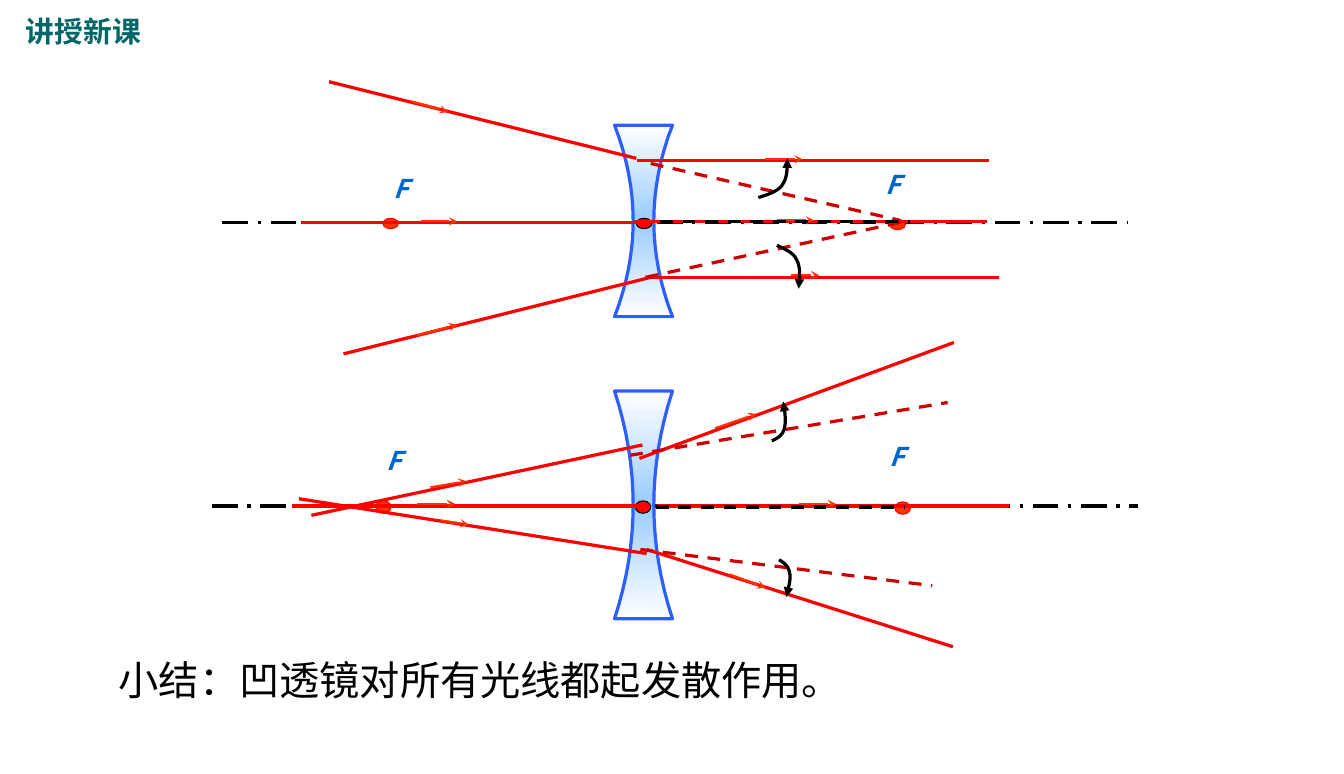
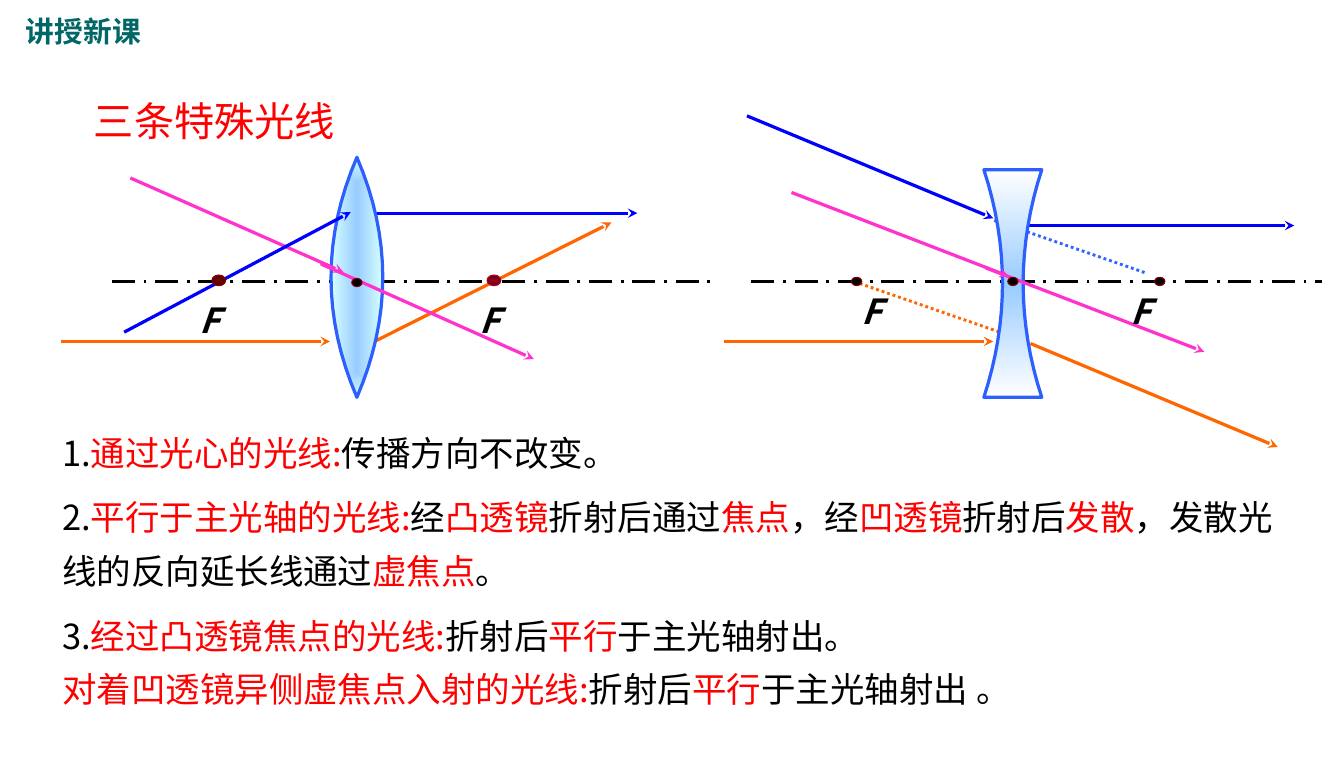
"""Build two slides on how lenses bend light rays."""
from lxml.etree import SubElement
from pptx import Presentation
from pptx.dml.color import RGBColor
from pptx.enum.dml import MSO_LINE
from pptx.enum.shapes import MSO_CONNECTOR, MSO_SHAPE
from pptx.enum.text import MSO_ANCHOR as ANCHOR, MSO_AUTO_SIZE as AUTO, PP_ALIGN as ALIGN
from pptx.oxml.ns import qn
from pptx.util import Pt

PX = 9144
CJK = "Noto Sans CJK SC"
COLORS = {
    "black": "000000", "red": "FF0000", "scarlet": "FF3300", "crimson": "CC0000",
    "label": "0066CC", "title": "006666", "orange": "FF6600", "blue": "0000FF",
    "sky": "3366FF", "pink": "FF33CC", "rim": "2D5FFF", "white": "FFFFFF",
    "glass": "99CCFF", "ice": "D5FFFF", "wine": "A50021", "dark wine": "4C000F",
    "maroon": "800000", "dark maroon": "3B0000",
}
RGB = {name: RGBColor.from_string(code) for name, code in COLORS.items()}
STYLES = {
    "axis": ("black", 2.25, MSO_LINE.LONG_DASH_DOT, None),
    "thin axis": ("black", 2, MSO_LINE.LONG_DASH_DOT, None),
    "ray": ("red", 2.25, None, None),
    "direction": ("scarlet", 1.5, None, "stealth"),
    "extension": ("crimson", 2.25, MSO_LINE.DASH, None),
    "axis extension": ("black", 2.25, MSO_LINE.DASH, None),
    "parallel ray": ("orange", 2.25, None, "stealth"),
    "focal ray": ("blue", 2.25, None, "stealth"),
    "centre ray": ("pink", 2.25, None, "stealth"),
    "parallel trace": ("orange", 2, MSO_LINE.ROUND_DOT, None),
    "focal trace": ("sky", 2, MSO_LINE.ROUND_DOT, None),
}


def add_line(page, style, x1, y1, x2, y2):
    color, width, dash, arrow = STYLES[style]
    stroke = page.shapes.add_connector(
        MSO_CONNECTOR.STRAIGHT, x1 * PX, y1 * PX, x2 * PX, y2 * PX)
    stroke.line.color.rgb = RGB[color]
    stroke.line.width = Pt(width)
    if dash:
        stroke.line.dash_style = dash
    if arrow:
        SubElement(stroke.line._get_or_add_ln(), qn("a:tailEnd"), type=arrow)
    SubElement(stroke._element.spPr, qn("a:effectLst"))


def fill_gradient(shape, colors, linear):
    shape.fill.gradient()
    gradient = shape._element.spPr.find(qn("a:gradFill"))
    gradient.clear()
    stops = SubElement(gradient, qn("a:gsLst"))
    for index, color in enumerate(colors):
        stop = SubElement(stops, qn("a:gs"), pos=str(100000 * index // (len(colors) - 1)))
        SubElement(stop, qn("a:srgbClr"), val=COLORS[color])
    if linear:
        SubElement(gradient, qn("a:lin"), ang="5400000", scaled="0")
    else:
        burst = SubElement(gradient, qn("a:path"), {"path": "shape"})
        SubElement(burst, qn("a:fillToRect"), {side: "50000" for side in "ltrb"})


deck = Presentation()
deck.slide_width, deck.slide_height = 1299 * PX, 748 * PX
diverging = deck.slides.add_slide(deck.slide_layouts[5])
special = deck.slides.add_slide(deck.slide_layouts[1])

for page, style, lines in (
    (diverging, "axis", [(215, 215, 1090, 215), (205, 489, 1100, 489)]),
    (special, "thin axis", [(108, 272, 692, 272), (726, 272, 1278, 272)]),
    (special, "parallel ray", [(59, 330, 319, 330), (700, 330, 960, 330),
                               (360, 331, 591, 215), (996, 332, 1235, 432)]),
    (special, "parallel trace", [(831, 274, 978, 325)]),
    (special, "focal ray", [(357, 206, 616, 206), (722, 112, 960, 211),
                            (991, 218, 1251, 218)]),
    (special, "focal trace", [(961, 213, 1108, 264)]),
):
    for ends in lines:
        add_line(page, style, *ends)

concave = (28, -18, ("white", "glass", "white"), True)
convex = (0, 25, ("glass", "ice"), False)
for page, center, top, height, (edge, bulge, colors, linear) in (
    (diverging, 622, 121, 185, concave),
    (diverging, 622, 378, 220, concave),
    (special, 979, 164, 220, concave),
    (special, 345, 152, 232, convex),
):
    right, left = [], []
    for step in range(17):
        reach = edge + bulge * (1 - (step / 8 - 1) ** 2)
        y = (top + height * step / 16) * PX
        right.append(((center + reach) * PX, y))
        left.insert(0, ((center - reach) * PX, y))
    outline = page.shapes.build_freeform(*right[0])
    outline.add_line_segments(right[1:] + left, close=True)
    lens = outline.convert_to_shape()
    lens.shadow.inherit = False
    fill_gradient(lens, colors, linear)
    lens.line.color.rgb = RGB["rim"]
    lens.line.width = Pt(2.25)

for style, lines in (
    ("centre ray", [(765, 186, 975, 267), (953, 259, 1164, 340),
                    (126, 172, 332, 263), (310, 255, 516, 347)]),
    ("focal ray", [(120, 321, 339, 205)]),
):
    for ends in lines:
        add_line(special, style, *ends)

for page, size, colors, rim, width, corners in (
    (diverging, (15, 10), ["red"], "black", 0.75, [(615, 211)]),
    (diverging, (15, 10), ["scarlet"], "red", 0.75, [(370, 211), (860, 212)]),
    (diverging, (15, 12), ["red"], "black", 0.75, [(614, 484)]),
    (diverging, (15, 12), ["scarlet"], "red", 0.75, [(363, 484), (865, 485)]),
    (special, (13, 10), ["wine", "dark wine"], "wine", 1, [(471, 266)]),
    (special, (13, 10), ["maroon", "dark maroon"], "maroon", 1, [(205, 266)]),
    (special, (10, 8), ["black"], "maroon", 0,
     [(1116, 268), (823, 268), (974, 268), (340, 269)]),
):
    for x, y in corners:
        dot = page.shapes.add_shape(
            MSO_SHAPE.OVAL, x * PX, y * PX, size[0] * PX, size[1] * PX)
        dot.shadow.inherit = False
        if len(colors) > 1:
            fill_gradient(dot, colors, False)
        else:
            dot.fill.solid()
            dot.fill.fore_color.rgb = RGB[colors[0]]
        dot.line.color.rgb = RGB[rim]
        dot.line.width = Pt(width)

for style, lines in (
    ("ray", [(291, 215, 616, 215), (332, 342, 629, 268), (318, 79, 615, 153),
             (616, 155, 956, 155), (626, 268, 966, 268), (614, 214, 954, 214),
             (618, 443, 922, 331), (625, 531, 921, 625), (635, 489, 975, 489),
             (282, 489, 622, 489), (301, 498, 621, 430), (289, 482, 625, 535)]),
    ("direction", [(407, 214, 442, 214), (403, 324, 442, 314), (398, 98, 433, 108),
                   (739, 154, 776, 154), (765, 266, 792, 266), (751, 213, 787, 213),
                   (691, 414, 731, 400), (705, 555, 740, 568), (772, 487, 808, 487),
                   (403, 487, 440, 487), (416, 471, 451, 465), (426, 503, 453, 507)]),
    ("extension", [(624, 268, 875, 214), (629, 158, 870, 213),
                   (609, 440, 916, 389), (619, 531, 901, 566)]),
    ("axis extension", [(638, 214, 880, 214), (634, 490, 875, 490)]),
):
    for ends in lines:
        add_line(diverging, style, *ends)

for knots in (
    [(733, 191), (742, 188), (752, 185), (756, 179), (761, 172), (761, 163), (761, 153)],
    [(751, 237), (759, 241), (767, 244), (770, 251), (774, 258), (773, 268), (772, 279)],
    [(746, 426), (751, 424), (756, 421), (758, 415), (760, 408), (759, 398), (757, 388)],
    [(753, 541), (758, 544), (762, 547), (763, 553), (765, 559), (762, 568), (760, 577)],
):
    points = []
    for curve in (knots[:4], knots[3:]):
        for step in range(1, 9):
            t = step / 8
            weights = ((1 - t) ** 3, 3 * t * (1 - t) ** 2, 3 * t * t * (1 - t), t ** 3)
            points.append(tuple(
                PX * sum(w * knot[axis] for w, knot in zip(weights, curve))
                for axis in (0, 1)))
    outline = diverging.shapes.build_freeform(knots[0][0] * PX, knots[0][1] * PX)
    outline.add_line_segments(points, close=False)
    turn = outline.convert_to_shape()
    turn.shadow.inherit = False
    turn.fill.background()
    turn.line.color.rgb = RGB["black"]
    turn.line.width = Pt(2.25)
    SubElement(turn.line._get_or_add_ln(), qn("a:tailEnd"), type="triangle")

title_look = ("Arial", 20, True, False, 1.2, ALIGN.LEFT, ANCHOR.TOP, ["title"])
focus_look = (CJK, 18, True, True, 1.2, ALIGN.CENTER, ANCHOR.TOP, ["label"])
mark_look = (CJK, 24, True, True, 1.2, ALIGN.LEFT, ANCHOR.TOP, ["black"])
summary_look = (CJK, 28, False, False, 1.2, ALIGN.LEFT, ANCHOR.TOP, ["black"])
heading_look = (CJK, 28, False, False, 1.2, ALIGN.LEFT, ANCHOR.MIDDLE, ["red"])
rules_look = (CJK, 24, False, False, 1.56, ALIGN.LEFT, ANCHOR.TOP, ["black", "red"])
rules = [
    "1.|通过光心的光线:|传播方向不改变。",
    "2.|平行于主光轴的光线:|经|凸透镜|折射后通过|焦点|，经|凹透镜|折射后|发散"
    "|，发散光线的反向延长线通过|虚焦点|。",
    "3.|经过凸透镜焦点的光线:|折射后|平行|于主光轴射出。",
    "|对着凹透镜异侧虚焦点入射的光线:|折射后|平行|于主光轴射出 。",
]
texts = [(page, page.shapes.title, (15, 8, 184, 44), title_look, ["讲授新课"])
         for page in (diverging, special)]
texts += [(diverging, None, (x, y, 86, 40), focus_look, ["F"])
          for x, y in ((345, 162), (820, 158), (338, 425), (824, 421))]
texts += [(special, None, (x, y, 65, 50), mark_look, ["F"])
          for x, y in ((454, 284), (823, 275), (1083, 275), (183, 284))]
texts += [
    (diverging, None, (105, 628, 1095, 57), summary_look, ["小结：凹透镜对所有光线都起发散作用。"]),
    (special, None, (81, 77, 706, 78), heading_look, ["三条特殊光线"]),
    (special, special.placeholders[1], (50, 400, 1220, 291), rules_look, rules),
]
for page, holder, place, look, lines in texts:
    font, size, bold, italic, leading, align, anchor, colors = look
    left, top, width, height = (PX * length for length in place)
    box = holder or page.shapes.add_textbox(left, top, width, height)
    box.left, box.top, box.width, box.height = left, top, width, height
    frame = box.text_frame
    frame.word_wrap = True
    frame.auto_size = AUTO.NONE
    frame.vertical_anchor = anchor
    for index, line in enumerate(lines):
        para = frame.add_paragraph() if index else frame.paragraphs[0]
        para.alignment = align
        para.line_spacing = Pt(size * leading)
        para.space_before = Pt(7.5 if index in (1, 2) else 0)
        for turn_index, words in enumerate(line.split("|")):
            if not words:
                continue
            span = para.add_run()
            span.text = words
            span.font.size = Pt(size)
            span.font.bold, span.font.italic = bold, italic
            span.font.color.rgb = RGB[colors[turn_index % len(colors)]]
            span.font.name = font
            SubElement(span.font._element, qn("a:ea"), typeface=font)

for para in special.placeholders[1].text_frame.paragraphs:
    layout = para._p.get_or_add_pPr()
    layout.set("marL", "0")
    layout.set("indent", "0")
    SubElement(layout, qn("a:buNone"))

deck.save("out.pptx")
